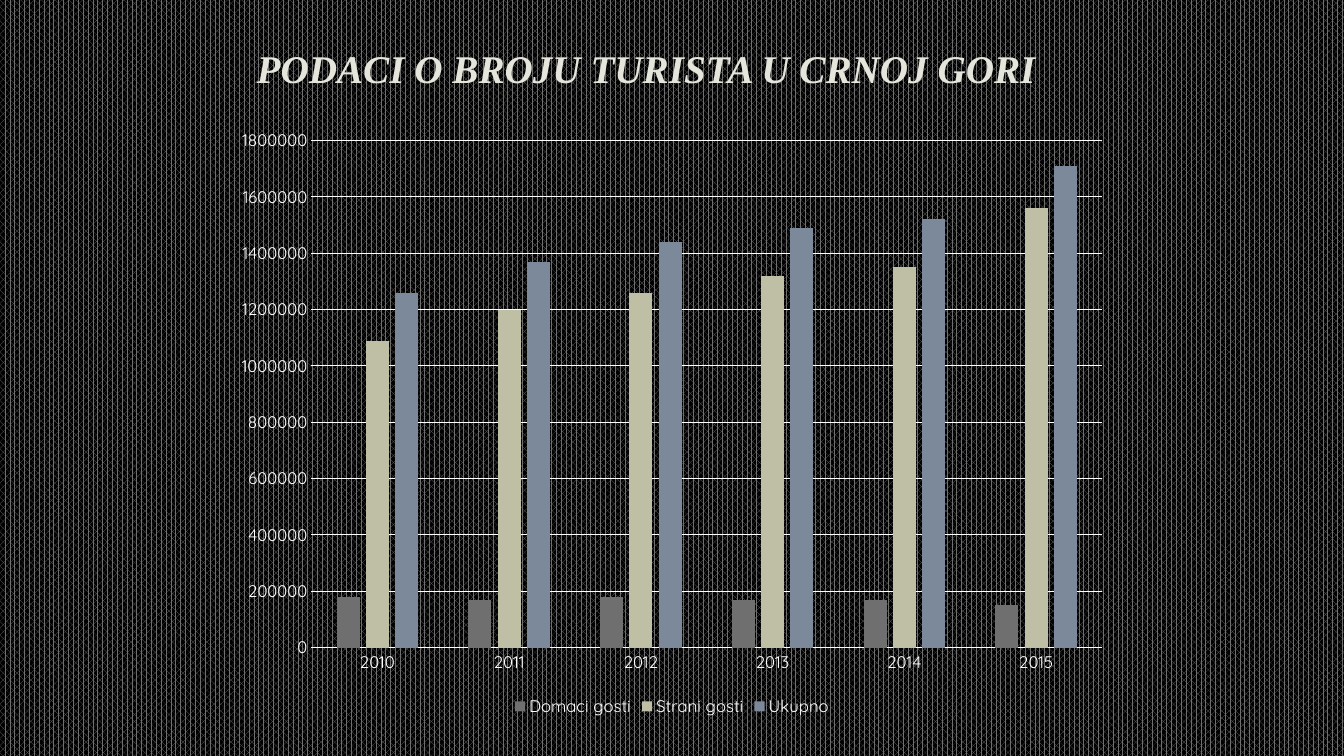
from dataclasses import dataclass

from lxml import etree
from pptx import Presentation
from pptx.chart.axis import _BaseAxis
from pptx.chart.chart import Chart
from pptx.chart.data import CategoryChartData
from pptx.dml.color import RGBColor
from pptx.dml.fill import FillFormat
from pptx.enum.chart import XL_CHART_TYPE, XL_LEGEND_POSITION, XL_TICK_MARK
from pptx.enum.dml import MSO_PATTERN
from pptx.enum.text import MSO_ANCHOR, MSO_AUTO_SIZE, PP_ALIGN
from pptx.oxml.ns import qn
from pptx.slide import Slide
from pptx.text.text import Font
from pptx.util import Emu, Pt

COLUMN_CLUSTERED = XL_CHART_TYPE.COLUMN_CLUSTERED
LEGEND_BOTTOM = XL_LEGEND_POSITION.BOTTOM
NO_TICKS = XL_TICK_MARK.NONE
PATTERN_70 = MSO_PATTERN.PERCENT_70
MIDDLE = MSO_ANCHOR.MIDDLE
NO_AUTOFIT = MSO_AUTO_SIZE.NONE
CENTER = PP_ALIGN.CENTER

EMU_PER_PX = 914400 / 100.8
TITLE_FONT = "Times New Roman"
CHART_FONT = "Quicksand"
WHITE = "FFFFFF"
BLACK = "000000"
GRAY = "6F6F6F"
SAND = "BFBFA5"
BLUE = "7C899A"
IVORY = "E5E5DB"


@dataclass
class GuestSeries:
    name: str
    values: tuple[int, ...]
    color: str


YEARS = ("2010", "2011", "2012", "2013", "2014", "2015")
GUESTS = (
    GuestSeries("Domaci gosti",
                (180000, 170000, 180000, 170000, 170000, 150000), GRAY),
    GuestSeries("Strani gosti",
                (1090000, 1200000, 1260000, 1320000, 1350000, 1560000), SAND),
    GuestSeries("Ukupno",
                (1260000, 1370000, 1440000, 1490000, 1520000, 1710000), BLUE),
)


def px(length: int) -> Emu:
    return Emu(round(length * EMU_PER_PX))


def rgb(color: str) -> RGBColor:
    return RGBColor.from_string(color)


def fill_solid(fill: FillFormat, color: str) -> None:
    fill.solid()
    fill.fore_color.rgb = rgb(color)


def format_font(font: Font, name: str, size: int, color: str) -> None:
    font.name = name
    font.size = Pt(size)
    fill_solid(font.fill, color)


def outline_text(font: Font, color: str, width: float) -> None:
    """Put a coloured outline around the letters of a run."""
    line = etree.Element(qn("a:ln"), w=str(Pt(width)))
    solid_fill = etree.SubElement(line, qn("a:solidFill"))
    etree.SubElement(solid_fill, qn("a:srgbClr"), val=color)
    font._element.insert(0, line)


def set_background(slide: Slide) -> None:
    fill = slide.background.fill
    fill.patterned()
    fill.pattern = PATTERN_70
    fill.fore_color.rgb = rgb(GRAY)
    fill.back_color.rgb = rgb(BLACK)


def add_title(slide: Slide, text: str) -> None:
    title = slide.shapes.title
    title.left, title.top, title.width, title.height = map(px, (217, 24, 858, 88))
    frame = title.text_frame
    frame.word_wrap = True
    frame.auto_size = NO_AUTOFIT
    frame.vertical_anchor = MIDDLE
    paragraph = frame.paragraphs[0]
    paragraph.alignment = CENTER
    run = paragraph.add_run()
    run.text = text
    format_font(run.font, TITLE_FONT, 28, IVORY)
    run.font.bold = True
    run.font.italic = True
    outline_text(run.font, SAND, 1.75)


def format_axis(axis: _BaseAxis) -> None:
    axis.major_tick_mark = NO_TICKS
    axis.minor_tick_mark = NO_TICKS
    format_font(axis.tick_labels.font, CHART_FONT, 12, WHITE)


def format_axes(chart: Chart) -> None:
    years, visitors = chart.category_axis, chart.value_axis
    format_axis(years)
    format_axis(visitors)
    visitors.minimum_scale = 0
    visitors.maximum_scale = 1800000
    visitors.major_unit = 200000
    visitors.tick_labels.number_format = "0"
    visitors.tick_labels.number_format_is_linked = False
    visitors.format.line.fill.background()
    visitors.has_major_gridlines = True
    for line in (years.format.line, visitors.major_gridlines.format.line):
        fill_solid(line.fill, WHITE)
        line.width = Pt(0.75)


def add_guest_chart(slide: Slide) -> None:
    data = CategoryChartData()
    data.categories = YEARS
    for guests in GUESTS:
        data.add_series(guests.name, guests.values)
    frame = slide.shapes.add_chart(
        COLUMN_CLUSTERED, px(224), px(118), px(896), px(603), data)
    chart = frame.chart
    chart.has_title = False
    format_font(chart.font, CHART_FONT, 10, WHITE)
    format_axes(chart)

    chart.has_legend = True
    chart.legend.position = LEGEND_BOTTOM
    chart.legend.include_in_layout = False
    format_font(chart.legend.font, CHART_FONT, 12, WHITE)

    plot = chart.plots[0]
    plot.gap_width = 219
    plot.overlap = -27
    plot.vary_by_categories = False
    for series, guests in zip(plot.series, GUESTS):
        fill_solid(series.format.fill, guests.color)
        series.format.line.fill.background()


def main() -> None:
    presentation = Presentation()
    presentation.slide_width = px(1344)
    presentation.slide_height = px(756)
    title_only = presentation.slide_layouts[5]
    slide = presentation.slides.add_slide(title_only)
    set_background(slide)
    add_title(slide, "PODACI O BROJU TURISTA U CRNOJ GORI")
    add_guest_chart(slide)
    presentation.save("out.pptx")


if __name__ == "__main__":
    main()
